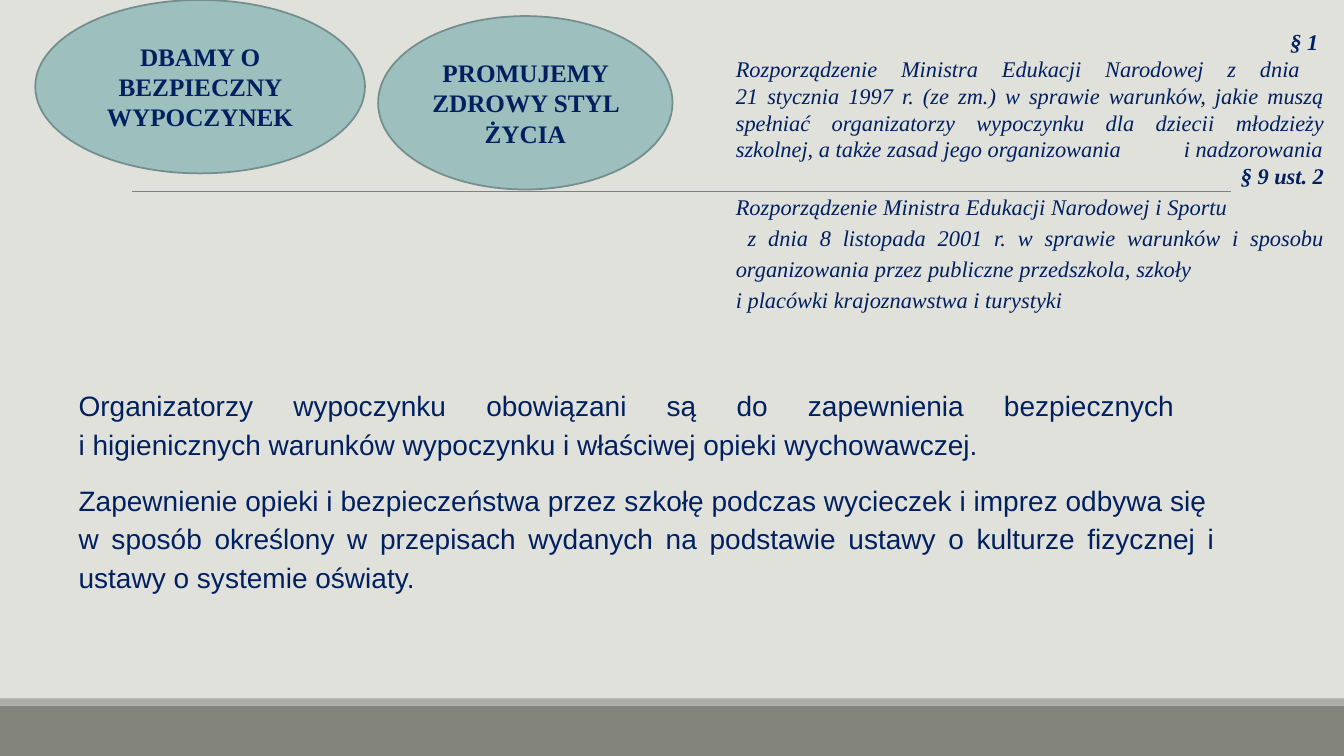
from dataclasses import dataclass

from lxml.etree import SubElement
from pptx import Presentation
from pptx.dml.color import RGBColor
from pptx.enum.shapes import MSO_CONNECTOR, MSO_SHAPE
from pptx.enum.text import MSO_ANCHOR, PP_ALIGN
from pptx.oxml.ns import qn
from pptx.util import Inches, Pt

COLORS = {
    "background": "E1E1DB",
    "footer": "82847C",
    "footer_edge": "ACADA8",
    "rule": "808080",
    "bubble": "9DBFBE",
    "bubble_line": "748D8D",
    "text": "002060",
}
SERIF = "Times New Roman"
SANS = "Arial"


@dataclass(frozen=True)
class Band:
    top: float
    height: float
    color: str


@dataclass(frozen=True)
class Bubble:
    left: float
    top: float
    width: float
    text: str


@dataclass(frozen=True)
class Citation:
    section: str
    act: str
    section_spacing: float
    act_spacing: float


BANDS = [Band(7, 0.5, "footer"), Band(6.93, 0.07, "footer_edge")]
BUBBLES = [
    Bubble(0.35, 0, 3.27, "DBAMY O BEZPIECZNY WYPOCZYNEK"),
    Bubble(3.75, 0.16, 2.92, "PROMUJEMY ZDROWY STYL ŻYCIA"),
]
CITATIONS = [
    Citation(
        "§ 1 ",
        "Rozporządzenie Ministra Edukacji Narodowej z dnia \v"
        "21 stycznia 1997 r. (ze zm.) w sprawie warunków, jakie muszą "
        "spełniać organizatorzy wypoczynku dla dzieci\ti "
        "młodzieży szkolnej, a także zasad jego organizowania\ti nadzorowania",
        1.15, 1.0,
    ),
    Citation(
        "§ 9 ust. 2",
        "Rozporządzenie Ministra Edukacji Narodowej i Sportu\t\v"
        " z dnia 8 listopada 2001 r. w sprawie warunków i sposobu "
        "organizowania przez publiczne przedszkola, szkoły\t\v"
        "i placówki krajoznawstwa i turystyki",
        1.0, 1.15,
    ),
]
DUTIES = [
    "Organizatorzy wypoczynku obowiązani są do zapewnienia bezpiecznych \v"
    "i higienicznych warunków wypoczynku i właściwej opieki wychowawczej.",
    "Zapewnienie opieki i bezpieczeństwa przez szkołę podczas wycieczek i imprez odbywa się \v"
    "w sposób określony w przepisach wydanych na podstawie ustawy o kulturze fizycznej "
    "i ustawy o systemie oświaty.",
]


def color(name: str) -> RGBColor:
    return RGBColor.from_string(COLORS[name])


def write(frame, text: str, *, font: str, size: float, align=PP_ALIGN.JUSTIFY,
          bold: bool = False, italic: bool = False, spacing: float = 1.0,
          before: float = 0, indent: float = 0, right_tab: float = 0) -> None:
    para = frame.paragraphs[0] if not frame.text else frame.add_paragraph()
    para.text = text
    para.alignment = align
    para.line_spacing = spacing
    para.space_before = Pt(before)
    properties = para._p.get_or_add_pPr()
    if indent:
        properties.set("marL", str(Inches(indent)))
    if right_tab:
        tabs = SubElement(properties, qn("a:tabLst"))
        SubElement(tabs, qn("a:tab"), pos=str(Inches(right_tab)), algn="r")
    for span in para.runs:
        span.font.name = font
        span.font.size = Pt(size)
        span.font.bold = bold
        span.font.italic = italic
        span.font.color.rgb = color("text")


def add_text_frame(page, left: float, top: float, width: float, height: float):
    box = page.shapes.add_textbox(Inches(left), Inches(top), Inches(width), Inches(height))
    box.text_frame.word_wrap = True
    return box.text_frame


def add_band(page, band: Band) -> None:
    box = page.shapes.add_shape(MSO_SHAPE.RECTANGLE, 0, Inches(band.top),
                                Inches(13.33), Inches(band.height))
    box.shadow.inherit = False
    box.fill.solid()
    box.fill.fore_color.rgb = color(band.color)
    box.line.fill.background()


def add_rule(page) -> None:
    rule = page.shapes.add_connector(MSO_CONNECTOR.STRAIGHT, Inches(1.31), Inches(1.9),
                                     Inches(12.21), Inches(1.9))
    rule.line.color.rgb = color("rule")
    rule.line.width = Pt(0.5)
    SubElement(rule._element.spPr, qn("a:effectLst"))


def add_bubble(page, bubble: Bubble) -> None:
    oval = page.shapes.add_shape(MSO_SHAPE.OVAL, Inches(bubble.left), Inches(bubble.top),
                                 Inches(bubble.width), Inches(1.72))
    oval.shadow.inherit = False
    oval.fill.solid()
    oval.fill.fore_color.rgb = color("bubble")
    oval.line.color.rgb = color("bubble_line")
    oval.line.width = Pt(1.25)
    oval.text_frame.word_wrap = True
    oval.text_frame.vertical_anchor = MSO_ANCHOR.MIDDLE
    write(oval.text_frame, bubble.text, font=SERIF, size=18, bold=True, align=PP_ALIGN.CENTER)


def add_duties(page) -> None:
    frame = add_text_frame(page, 0.68, 3.76, 11.37, 2.74)
    frame.margin_left = frame.margin_right = 0
    for duty in DUTIES:
        write(frame, duty, font=SANS, size=20, spacing=1.15, before=12, indent=0.1)


def add_citations(page) -> None:
    frame = add_text_frame(page, 7.2, 0.19, 6.03, 3.26)
    for citation in CITATIONS:
        write(frame, citation.section, font=SERIF, size=16, bold=True, italic=True,
              align=PP_ALIGN.RIGHT, spacing=citation.section_spacing)
        write(frame, citation.act, font=SERIF, size=16, italic=True,
              spacing=citation.act_spacing, right_tab=5.82)


def main() -> None:
    deck = Presentation()
    deck.slide_width = Inches(13.33)
    deck.slide_height = Inches(7.5)
    page = deck.slides.add_slide(deck.slide_layouts[6])
    page.background.fill.solid()
    page.background.fill.fore_color.rgb = color("background")
    for band in BANDS:
        add_band(page, band)
    add_rule(page)
    add_duties(page)
    for bubble in BUBBLES:
        add_bubble(page, bubble)
    add_citations(page)
    deck.save("out.pptx")


if __name__ == "__main__":
    main()
